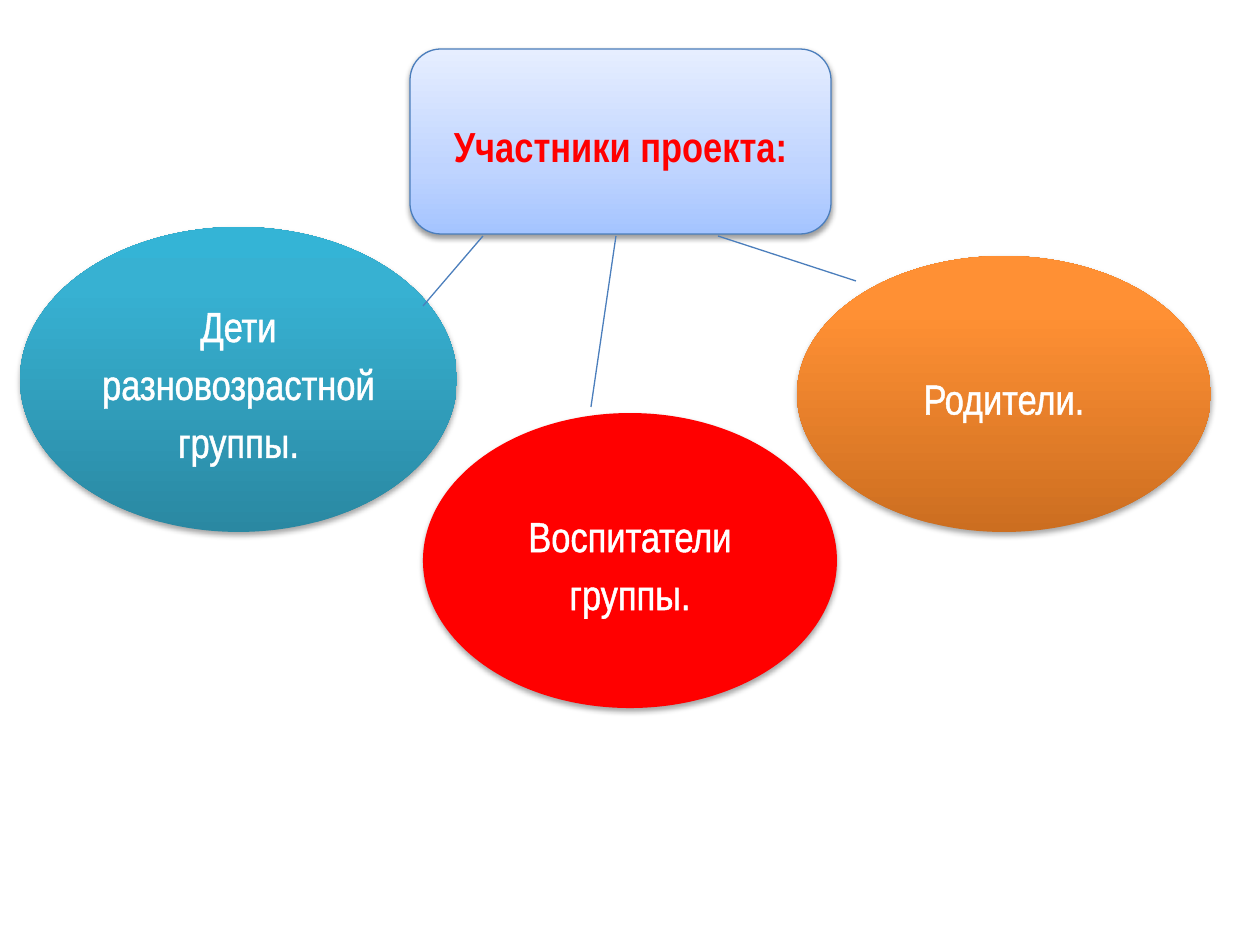
import pptx
import pptx.util
import pptx.dml.color
import pptx.enum.shapes
import pptx.enum.text
import pptx.oxml.ns
from lxml import etree

PX = 914400 / 126
FONT = "Arial Narrow"
COLORS = {"white": "FFFFFF", "red": "FF0000", "line": "4B7EBC", "shadow": "000000"}
TEAL = [(0, "2A88A2"), (80, "37B1D2"), (100, "34B4D6")]
ORANGE = [(0, "CC6E20"), (80, "FF9034"), (100, "FF9136")]
PALE_BLUE = [(0, "A4C4FF"), (35, "BFD4FF"), (100, "E6EEFF")]

PARTICIPANTS = [
    ("Дети разновозрастной группы.", (20, 227, 437, 305), TEAL),
    ("Воспитатели группы.", (423, 413, 414, 295), COLORS["red"]),
    ("Родители.", (797, 256, 414, 276), ORANGE),
]
TITLE = ("Участники проекта:", (410, 49, 421, 185), PALE_BLUE)
LINKS = [
    ((483, 236), (423, 306)),
    ((616, 236), (591, 407)),
    ((718, 236), (856, 281)),
]


def emu(pixels):
    return round(pixels * PX)


def rgb(color):
    return pptx.dml.color.RGBColor.from_string(color)


def add_element(parent, tag, **attributes):
    values = {name: str(value) for name, value in attributes.items()}
    return etree.SubElement(parent, pptx.oxml.ns.qn(tag), values)


def set_fill(shape, fill):
    if isinstance(fill, str):
        shape.fill.solid()
        shape.fill.fore_color.rgb = rgb(fill)
        return
    shape.fill.gradient()
    shape.fill.gradient_angle = 90
    stops = shape._element.spPr.find(".//" + pptx.oxml.ns.qn("a:gsLst"))
    for stop in list(stops):
        stops.remove(stop)
    for position, color in fill:
        stop = add_element(stops, "a:gs", pos=position * 1000)
        add_element(stop, "a:srgbClr", val=color)


def set_line(shape, color):
    shape.line.color.rgb = rgb(color)
    shape.line.width = pptx.util.Pt(0.75)


def add_shadow(shape, opacity):
    shape.shadow.inherit = False
    effects = shape._element.spPr.find(pptx.oxml.ns.qn("a:effectLst"))
    shadow = add_element(effects, "a:outerShdw", blurRad=40000, dist=23000,
                         dir=5400000, rotWithShape=0)
    color = add_element(shadow, "a:srgbClr", val=COLORS["shadow"])
    add_element(color, "a:alpha", val=opacity * 1000)


def add_text(shape, text, color, bold=False, outline=None):
    frame = shape.text_frame
    frame.word_wrap = True
    frame.vertical_anchor = pptx.enum.text.MSO_ANCHOR.MIDDLE
    para = frame.paragraphs[0]
    para.alignment = pptx.enum.text.PP_ALIGN.CENTER
    para.line_spacing = 1.15
    para.space_after = pptx.util.Pt(10)
    span = para.add_run()
    span.text = text
    span.font.name = FONT
    span.font.size = pptx.util.Pt(24)
    span.font.bold = bold
    span.font.color.rgb = rgb(color)
    if outline:
        properties = span.font._element
        border = add_element(properties, "a:ln", w=pptx.util.Pt(1.45))
        paint = add_element(border, "a:solidFill")
        add_element(paint, "a:srgbClr", val=outline)
        properties.insert(0, border)


def add_block(page, kind, place, fill, opacity):
    shape = page.shapes.add_shape(kind, *map(emu, place))
    set_fill(shape, fill)
    add_shadow(shape, opacity)
    return shape


def main():
    deck = pptx.Presentation()
    deck.slide_width = emu(1260)
    deck.slide_height = emu(945)
    page = deck.slides.add_slide(deck.slide_layouts[6])
    kinds = pptx.enum.shapes.MSO_SHAPE

    for text, place, fill in PARTICIPANTS:
        oval = add_block(page, kinds.OVAL, place, fill, 35)
        oval.line.fill.background()
        add_text(oval, text, COLORS["white"], outline=COLORS["white"])

    text, place, fill = TITLE
    title = add_block(page, kinds.ROUNDED_RECTANGLE, place, fill, 38)
    set_line(title, COLORS["line"])
    add_text(title, text, COLORS["red"], bold=True)

    for start, end in LINKS:
        link = page.shapes.add_connector(pptx.enum.shapes.MSO_CONNECTOR.STRAIGHT,
                                         *map(emu, start + end))
        set_line(link, COLORS["line"])
        add_element(link._element.spPr, "a:effectLst")

    deck.save("out.pptx")


if __name__ == "__main__":
    main()
